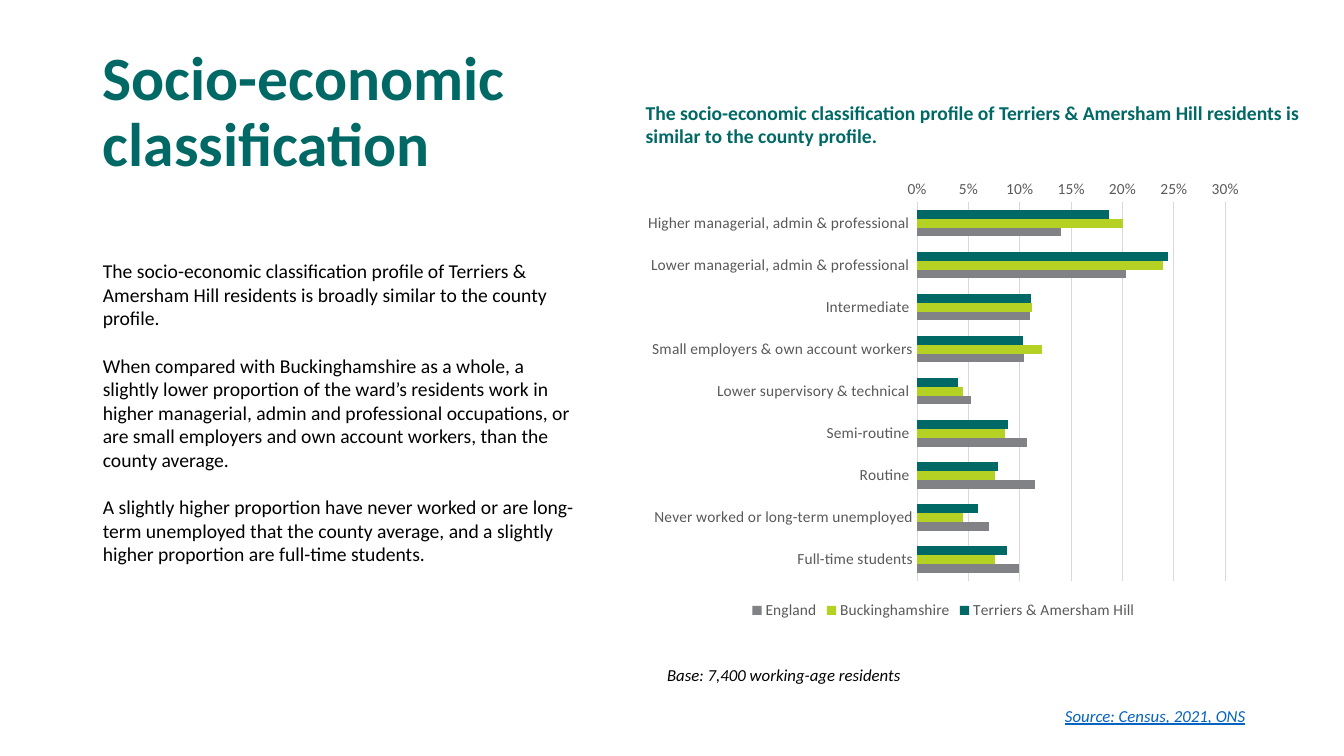
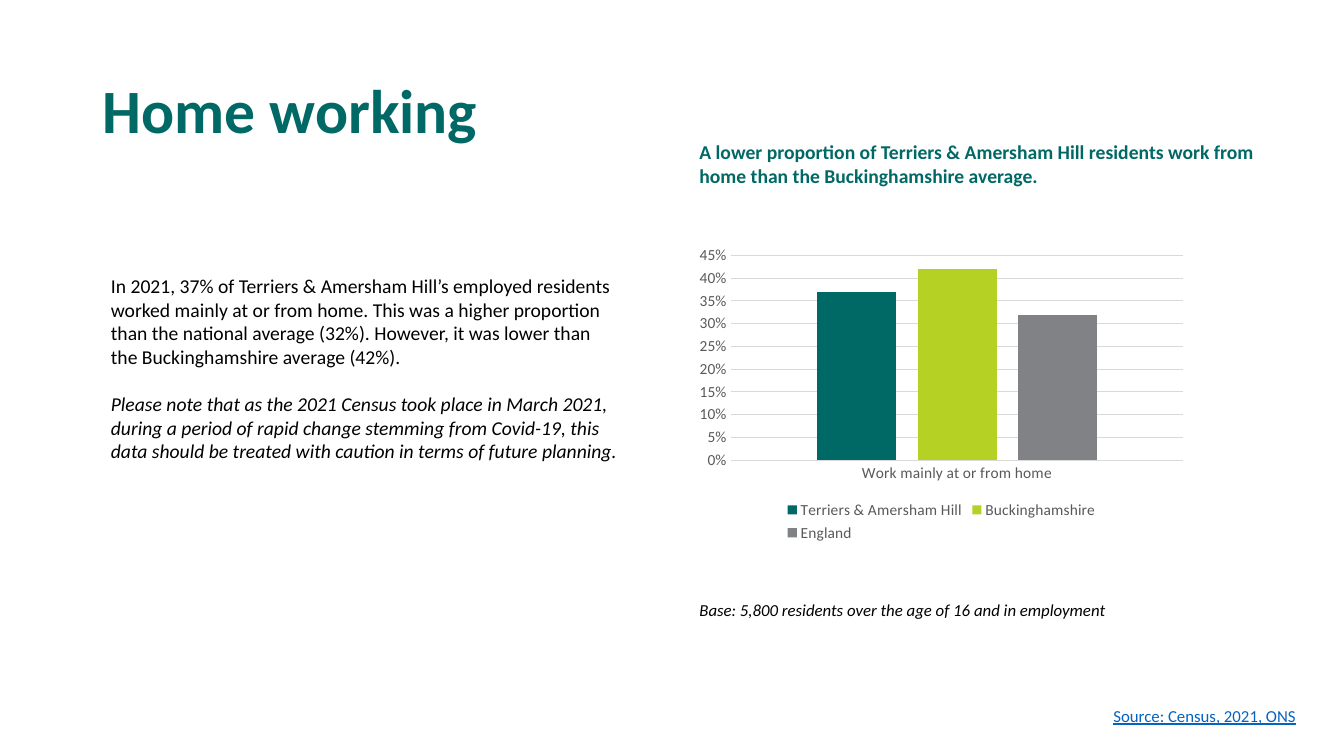
from lxml.etree import SubElement
from pptx import Presentation
from pptx.chart.data import CategoryChartData as Data
from pptx.dml.color import RGBColor as RGB
from pptx.enum.chart import XL_CHART_TYPE as Kind, XL_LEGEND_POSITION as Spot, XL_TICK_MARK as Tick
from pptx.enum.text import MSO_ANCHOR as Anchor, MSO_AUTO_SIZE as Fit, PP_ALIGN as Align
from pptx.oxml.ns import qn
from pptx.util import Inches, Pt

WIDE, HIGH = Inches(13.33), Inches(7.5)
FACE = "Calibri"
TEAL = RGB(0x00, 0x69, 0x65)
LIME = RGB(0xB5, 0xD1, 0x23)
GREY = RGB(0x80, 0x82, 0x85)
BLACK = RGB(0x00, 0x00, 0x00)
BLUE = RGB(0x05, 0x63, 0xC1)
LABEL = RGB(0x59, 0x59, 0x59)
RULE = RGB(0xD9, 0xD9, 0xD9)

AREAS = {"Terriers & Amersham Hill": TEAL, "Buckinghamshire": LIME, "England": GREY}
CLASSES = {
    "Higher managerial, admin & professional ": (0.187, 0.2, 0.14),
    "Lower managerial, admin & professional ": (0.244, 0.239, 0.203),
    "Intermediate ": (0.111, 0.112, 0.11),
    "Small employers & own account workers": (0.103, 0.122, 0.104),
    "Lower supervisory & technical ": (0.04, 0.045, 0.052),
    "Semi-routine ": (0.089, 0.086, 0.107),
    "Routine ": (0.079, 0.076, 0.115),
    "Never worked or long-term unemployed": (0.059, 0.045, 0.07),
    "Full-time students": (0.088, 0.076, 0.099),
}
HOME = {"Work mainly at or from home": (0.37, 0.42, 0.32)}


def area(left, top, width, height):
    """Turn percentages of the slide's size into lengths."""
    return [int(side * part / 100) for side, part in zip((WIDE, HIGH) * 2, (left, top, width, height))]


def place(shape, box):
    shape.left, shape.top, shape.width, shape.height = area(*box)


def style(font, size, color, bold=False, italic=False):
    font.name, font.size, font.bold, font.italic = FACE, Pt(size), bold, italic
    font.color.rgb = color


def add_title(slide, text, width):
    title = slide.shapes.title
    place(title, (6.9, 5.33, width, 19.33))
    frame = title.text_frame
    frame.auto_size, frame.vertical_anchor = Fit.NONE, Anchor.MIDDLE
    frame.text = text
    para = frame.paragraphs[0]
    para.alignment, para.line_spacing = Align.LEFT, 0.9
    style(para.font, 44, TEAL, bold=True)


def add_body(slide, texts, box):
    """Fill the body placeholder with plain paragraphs and return them."""
    body = slide.placeholders[1]
    place(body, box)
    frame = body.text_frame
    frame.auto_size = Fit.NONE
    frame.text = "\n".join(texts)
    for i, para in enumerate(frame.paragraphs):
        para.space_before = Pt(17 if i else 0)
        para.alignment = Align.LEFT
        style(para.font, 14, BLACK)
        props = para._p.get_or_add_pPr()
        props.set("marL", "0")
        props.set("indent", "0")
        # The bullet mark must precede the default run properties.
        mark = SubElement(props, qn("a:buNone"))
        props.find(qn("a:defRPr")).addprevious(mark)
    return frame.paragraphs


def add_text(slide, text, box, size, color, bold=False, italic=False):
    frame = slide.shapes.add_textbox(*area(*box)).text_frame
    frame.word_wrap = True
    frame.text = text
    font = frame.paragraphs[0].font
    style(font, size, color, bold, italic)
    return font


def add_lead(slide, text, left, top, width):
    add_text(slide, text, (left, top, width, 7.6), 14, TEAL, bold=True)


def add_base(slide, text, left, top, width):
    add_text(slide, text, (left, top, width, 4), 12, BLACK, italic=True)


def add_source(slide, left, italic):
    font = add_text(slide, "Source: Census, 2021, ONS", (left, 92.67, 16.2, 4), 12, BLUE, italic=italic)
    font.underline = True


def add_chart(slide, kind, rows, box, top, gap):
    """Draw one series per area; top is the end of the value axis."""
    data = Data(number_format="0%")
    data.categories = list(rows)
    for name, values in zip(AREAS, zip(*rows.values())):
        data.add_series(name, values)
    chart = slide.shapes.add_chart(kind, *area(*box), data).chart
    chart.has_title = False
    style(chart.font, 11, LABEL)
    chart.has_legend = True
    chart.legend.position = Spot.BOTTOM
    chart.legend.include_in_layout = False
    style(chart.legend.font, 11, LABEL)

    plot = chart.plots[0]
    plot.gap_width, plot.vary_by_categories = gap, False
    for series, color in zip(plot.series, AREAS.values()):
        series.invert_if_negative = False
        series.format.fill.solid()
        series.format.fill.fore_color.rgb = color

    cats, vals = chart.category_axis, chart.value_axis
    for axis in (cats, vals):
        axis.major_tick_mark = axis.minor_tick_mark = Tick.NONE
        style(axis.tick_labels.font, 11, LABEL)
    vals.has_major_gridlines = True
    for line in (cats.format.line, vals.major_gridlines.format.line):
        line.color.rgb, line.width = RULE, Pt(0.75)
    vals.format.line.fill.background()
    vals.minimum_scale, vals.maximum_scale, vals.major_unit = 0, top, 0.05
    vals.tick_labels.number_format = "0%"
    vals.tick_labels.number_format_is_linked = False
    return chart


def class_slide(slide):
    add_title(slide, "Socio-economic classification", 38.1)
    add_base(slide, "Base: 7,400 working-age residents", 48.9, 87.33, 43.8)
    add_source(slide, 78.5, italic=True)
    chart = add_chart(slide, Kind.BAR_CLUSTERED, CLASSES, (47.3, 22.53, 45.8, 60), 0.3, 182)
    chart.category_axis.reverse_order = True
    add_lead(slide, "The socio-economic classification profile of Terriers & Amersham Hill residents "
             "is similar to the county profile.", 47.3, 12.67, 50.3)
    add_body(slide, (
        "The socio-economic classification profile of Terriers & Amersham Hill residents "
        "is broadly similar to the county profile.",
        "When compared with Buckinghamshire as a whole, a slightly lower proportion of the ward’s "
        "residents work in higher managerial, admin and professional occupations, or are small "
        "employers and own account workers, than the county average.",
        "A slightly higher proportion have never worked or are long-term unemployed that the county "
        "average, and a slightly higher proportion are full-time students.",
    ), (6.9, 33.6, 36.8, 42.1))


def home_slide(slide):
    left, width = 51.3, 37.5
    add_title(slide, "Home working", 49.4)
    add_lead(slide, "A lower proportion of Terriers & Amersham Hill residents work from home "
             "than the Buckinghamshire average.", left, 17.87, 43.5)
    paras = add_body(slide, (
        "In 2021, 37% of Terriers & Amersham Hill’s employed residents worked mainly at or from home. "
        "This was a higher proportion than the national average (32%). However, it was lower than "
        "the Buckinghamshire average (42%).",
        "Please note that as the 2021 Census took place in March 2021, during a period of rapid change "
        "stemming from Covid-19, this data should be treated with caution in terms of future planning.",
    ), (7.5, 35.6, 39.2, 29.6))
    paras[-1].font.italic = True
    add_source(slide, 82.1, italic=False)
    add_base(slide, "Base: 5,800 residents over the age of 16 and in employment", left, 78.67, width)
    chart = add_chart(slide, Kind.COLUMN_CLUSTERED, HOME, (left, 31.73, width, 40.53), 0.45, 219)
    chart.plots[0].overlap = -27


def main():
    deck = Presentation()
    deck.slide_width, deck.slide_height = WIDE, HIGH
    for fill in (class_slide, home_slide):
        fill(deck.slides.add_slide(deck.slide_layouts[1]))
    deck.save("out.pptx")


if __name__ == "__main__":
    main()
